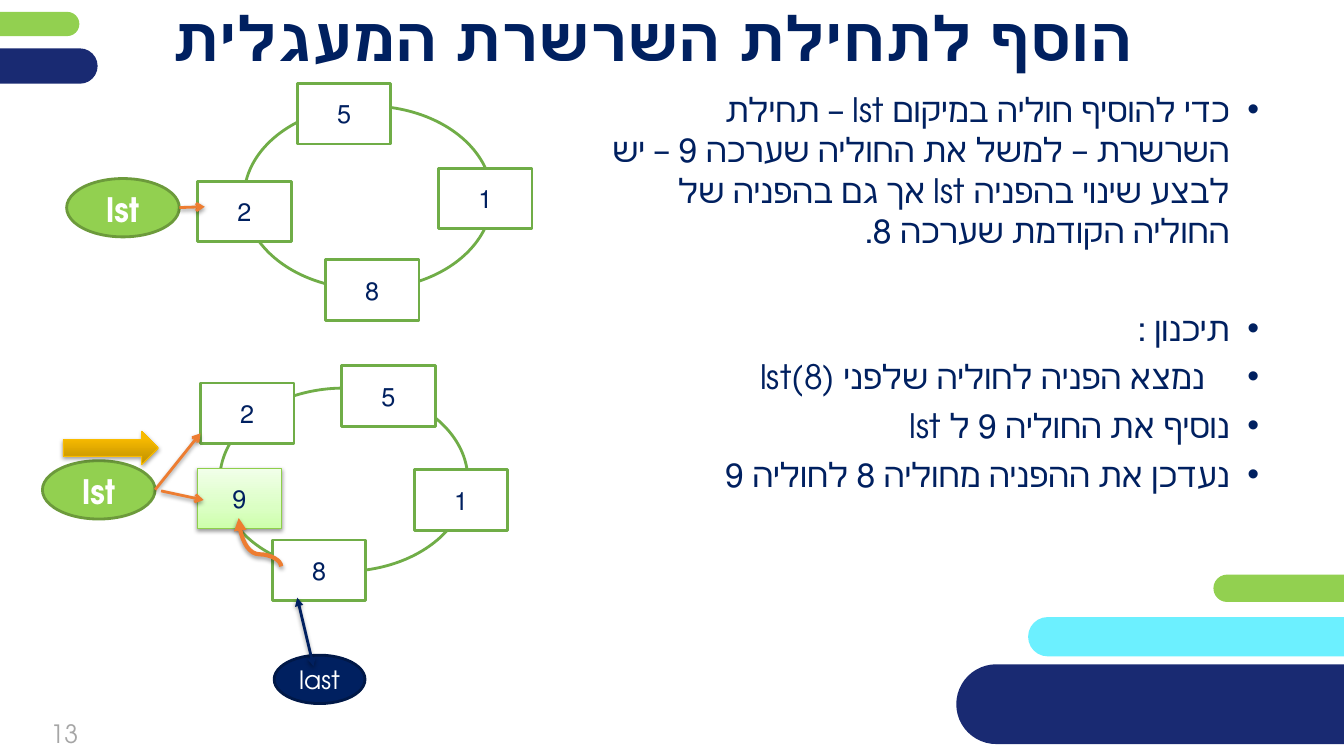
from lxml import etree
from pptx import Presentation
from pptx.dml.color import RGBColor
from pptx.enum import shapes, text
from pptx.oxml import ns
from pptx.util import Cm, Pt

FONT = "TeX Gyre Adventor"
COLORS = {
    "navy": "002060", "deep": "192A72", "lime": "92D050", "cyan": "6CF0FF",
    "grey": "A6A6A6", "white": "FFFFFF", "green": "70AD47", "olive": "6C9A3B",
    "orange": "ED7D31", "leaf": "8FCF4B", "gold": "F9BC00", "ink": "001847",
}
NEW_NODE_STOPS = [(0, "CEFFAC"), (35, "DBFFC4"), (100, "F1FFE9")]
GOLD_STOPS = [(0, "BE8F00"), (80, "F7BA00"), (100, "F8BB00")]
NODE_SIZE = (2.36, 1.52)
RING_SIZE = (6.25, 4.62)
POINTER_SIZE = (2.84, 1.47)
KIND = shapes.MSO_SHAPE
ALIGN = text.PP_ALIGN


def color(name):
    return RGBColor.from_string(COLORS[name])


def sub(parent, tag, **attributes):
    return etree.SubElement(parent, ns.qn(tag), attributes)


def write(paragraph, words, size=18, ink="navy", bold=False, align=ALIGN.CENTER,
          rtl=True, before=0, after=0, spacing=1.0, bullet_indent=None):
    paragraph.alignment = align
    paragraph.space_before, paragraph.space_after = Pt(before), Pt(after)
    paragraph.line_spacing = spacing
    properties = paragraph._p.get_or_add_pPr()
    properties.set("rtl", str(int(rtl)))
    if bullet_indent:
        properties.set("marL", str(Cm(bullet_indent)))
        properties.set("indent", str(-Cm(bullet_indent)))
        sub(properties, "a:buFont", typeface="Arial")
        sub(properties, "a:buChar", char="•")
    run = paragraph.add_run()
    run.text = words
    run.font.name, run.font.size, run.font.bold = FONT, Pt(size), bold
    run.font.color.rgb = color(ink)


def set_insets(frame, bottom=0):
    frame.margin_left = frame.margin_right = frame.margin_top = 0
    frame.margin_bottom = Cm(bottom)


def place(item, left, top, width, height):
    item.left, item.top = Cm(left), Cm(top)
    item.width, item.height = Cm(width), Cm(height)


def add_shadow(item, opacity=38, distance=1.6):
    effects = sub(item.element.spPr, "a:effectLst")
    shadow = sub(effects, "a:outerShdw", blurRad=str(Pt(3.1)), dist=str(Pt(distance)),
                 dir="5400000", rotWithShape="0")
    black = sub(shadow, "a:srgbClr", val="000000")
    sub(black, "a:alpha", val=str(opacity * 1000))


def fill_gradient(item, stops):
    item.fill.gradient()
    item.fill.gradient_angle = 90
    stop_list = item.element.spPr.find(ns.qn("a:gradFill")).find(ns.qn("a:gsLst"))
    for old in list(stop_list):
        stop_list.remove(old)
    for position, value in stops:
        sub(sub(stop_list, "a:gs", pos=str(position * 1000)), "a:srgbClr", val=value)


def add_block(parent, kind, box, fill=None, edge=None, weight=2, stops=None):
    block = parent.shapes.add_shape(kind, *map(Cm, box))
    if stops:
        fill_gradient(block, stops)
    else:
        block.fill.solid()
        block.fill.fore_color.rgb = color(fill)
    if edge:
        block.line.color.rgb = color(edge)
        block.line.width = Pt(weight)
    else:
        block.line.fill.background()
    if stops:
        add_shadow(block)
    else:
        block.shadow.inherit = False
    block.text_frame.vertical_anchor = text.MSO_ANCHOR.MIDDLE
    return block


def add_bar(slide, fill, *box):
    bar = add_block(slide, KIND.ROUNDED_RECTANGLE, box, fill)
    bar.adjustments[0] = 0.5


def add_arrow(parent, start, end, ink="orange", weight=2, tip="arrow", both=False,
              kind=shapes.MSO_CONNECTOR.STRAIGHT):
    arrow = parent.shapes.add_connector(kind, *map(Cm, (*start, *end)))
    arrow.line.color.rgb = color(ink)
    arrow.line.width = Pt(weight)
    line = arrow.line._get_or_add_ln()
    if both:
        sub(line, "a:headEnd", type=tip)
    sub(line, "a:tailEnd", type=tip)
    add_shadow(arrow)
    return arrow


def add_node(parent, value, left, top):
    node = add_block(parent, KIND.RECTANGLE, (left, top, *NODE_SIZE), "white", "green")
    write(node.text_frame.paragraphs[0], value)


def add_ring(slide, corner, nodes, pointer_corner):
    ring = slide.shapes.add_group_shape()
    add_block(ring, KIND.FLOWCHART_CONNECTOR, (*corner, *RING_SIZE), "white", "green")
    for value, left, top in nodes:
        add_node(ring, value, left, top)
    pointer = add_block(ring, KIND.OVAL, (*pointer_corner, *POINTER_SIZE), "lime", "olive")
    set_insets(pointer.text_frame)
    write(pointer.text_frame.paragraphs[0], "lst", size=24, ink="white", bold=True,
          spacing=1.07, after=8)
    return ring


def add_relink_curve(slide):
    curve = add_arrow(slide, (5.94, 13.13), (7.16, 14.2), weight=3, tip="triangle",
                      kind=shapes.MSO_CONNECTOR.CURVE)
    curve.element.spPr.xfrm.set("rot", "16200000")
    curve.element.spPr.xfrm.set("flipV", "1")
    geometry = curve.element.spPr.find(ns.qn("a:prstGeom"))
    guides = geometry.find(ns.qn("a:avLst"))
    sub(guides, "a:gd", name="adj1", fmla="val 25000")


def add_last(slide):
    group = slide.shapes.add_group_shape()
    last = add_block(group, KIND.OVAL, (6.91, 16.51, 2.29, 1.22), "navy", "ink")
    write(last.text_frame.paragraphs[0], "last", ink="white")
    add_arrow(group, (7.9, 16.79), (7.49, 15.06), ink="navy", tip="triangle", both=True)


def fill_title(title):
    place(title, 2.84, 0.43, 27.23, 2.69)
    frame = title.text_frame
    frame.auto_size = text.MSO_AUTO_SIZE.NONE
    frame.vertical_anchor = text.MSO_ANCHOR.MIDDLE
    set_insets(frame, bottom=1.68)
    write(frame.paragraphs[0], "הוסף לתחילת השרשרת המעגלית", size=44, bold=True)


def fill_plan(body):
    place(body, 14.53, 2.11, 17.45, 11.38)
    frame = body.text_frame
    frame.auto_size = text.MSO_AUTO_SIZE.NONE
    plan = [
        ("כדי להוסיף חוליה במיקום lst – תחילת השרשרת – למשל את החוליה שערכה 9 – יש "
         "לבצע שינוי בהפניה lst אך גם בהפניה של החוליה הקודמת שערכה 8.", 0, 0.74),
        ("תיכנון :", 35, 0.74),
        ("נמצא הפניה לחוליה שלפני lst(8)", 0, 1.37),
        ("נוסיף את החוליה 9 ל lst", 0, 0.74),
        ("נעדכן את ההפניה מחוליה 8 לחוליה 9", 0, 0.74),
    ]
    for index, (words, before, indent) in enumerate(plan):
        step = frame.add_paragraph() if index else frame.paragraphs[0]
        write(step, words, size=24, align=ALIGN.RIGHT, before=before, after=6,
              bullet_indent=indent)


def main():
    deck = Presentation()
    deck.slide_width, deck.slide_height = Cm(33.87), Cm(19.05)
    slide = deck.slides.add_slide(deck.slide_layouts[1])
    add_bar(slide, "lime", -3.84, 0.3, 5.84, 0.61)
    add_bar(slide, "deep", -4.8, 1.22, 7.26, 0.89)
    add_bar(slide, "cyan", 25.91, 15.55, 13.23, 0.99)
    add_bar(slide, "deep", 24.1, 16.74, 11.46, 2.01)
    add_bar(slide, "lime", 30.58, 14.48, 6.58, 0.69)
    number = slide.shapes.add_textbox(Cm(-0.46), Cm(17.75), Cm(4.17), Cm(1.45))
    number.text_frame.word_wrap = True
    number.text_frame.vertical_anchor = text.MSO_ANCHOR.MIDDLE
    write(number.text_frame.paragraphs[0], "13", ink="grey", rtl=False)
    fill_title(slide.shapes.title)
    fill_plan(slide.placeholders[1])

    before = [("5", 7.49, 2.11), ("1", 11.05, 4.24), ("8", 8.2, 6.55), ("2", 4.98, 4.57)]
    after = [("5", 8.61, 9.22), ("1", 10.44, 11.84), ("8", 6.86, 13.61), ("2", 5.05, 9.65)]
    first_ring = add_ring(slide, (6.15, 2.67), before, (1.68, 4.5))
    add_arrow(first_ring, (4.52, 5.23), (5.16, 5.21))
    add_ring(slide, (5.54, 9.78), after, (1.07, 11.61))
    add_arrow(slide, (3.91, 12.34), (5.05, 10.92))
    new_node = add_block(slide, KIND.RECTANGLE, (4.98, 11.81, 2.11, 1.5), edge="leaf",
                         weight=0.75, stops=NEW_NODE_STOPS)
    write(new_node.text_frame.paragraphs[0], "9")
    add_block(slide, KIND.RIGHT_ARROW, (1.6, 10.87, 2.39, 0.84), edge="gold",
              weight=0.75, stops=GOLD_STOPS)
    add_arrow(slide, (4.06, 12.37), (5.13, 12.6))
    add_relink_curve(slide)
    add_last(slide)
    deck.save("out.pptx")


if __name__ == "__main__":
    main()
